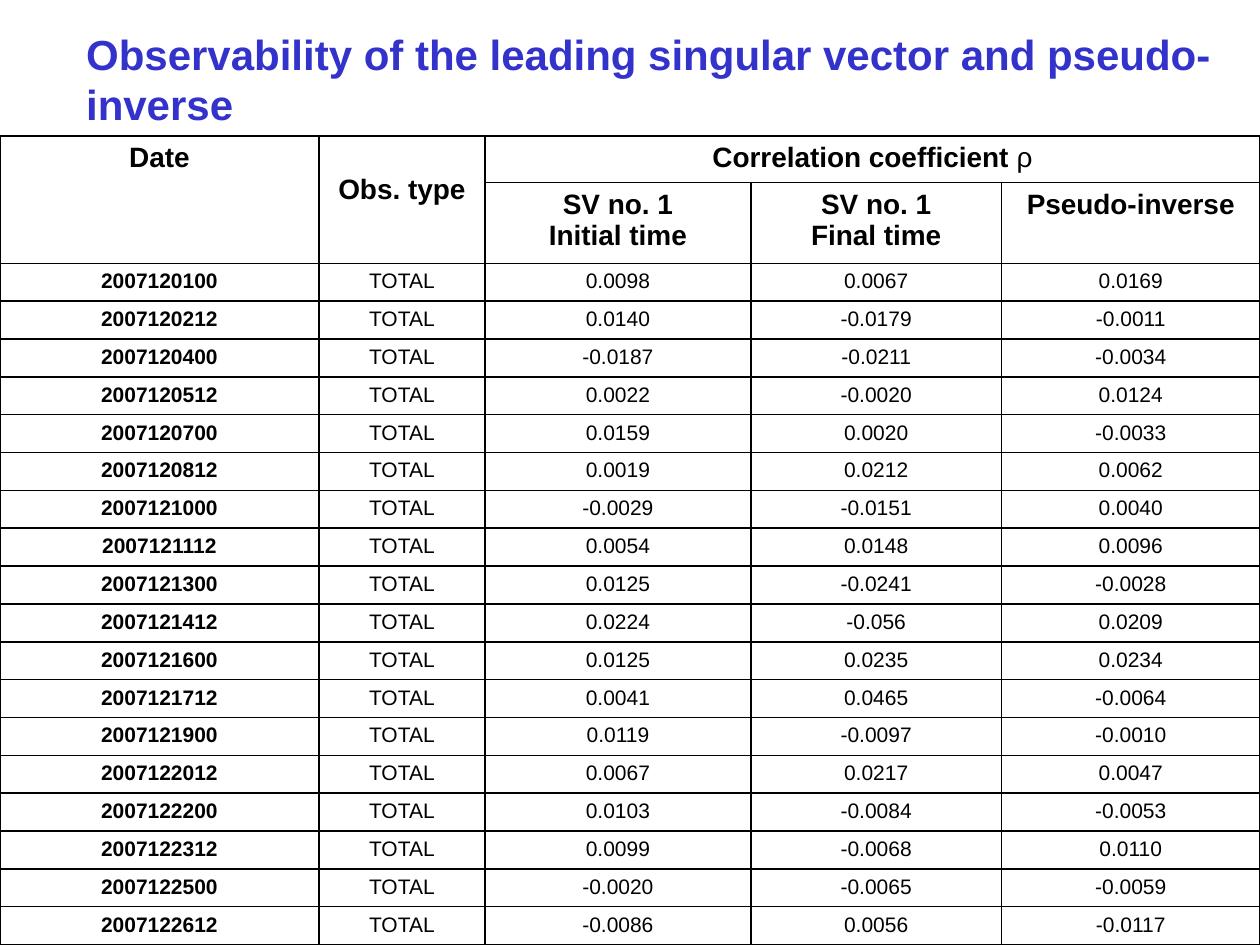
from dataclasses import dataclass
from lxml import etree
from pptx import Presentation
from pptx.dml.color import RGBColor
from pptx.enum import text
from pptx.oxml import ns
from pptx.util import Pt


@dataclass(frozen=True)
class Theme:
    """Hold the colours, font and type sizes of the slide."""
    font: str = "Arial"
    title_color: str = "3333CC"
    ink: str = "000000"
    paper: str = "FFFFFF"
    title_size: int = 24
    header_size: int = 16
    body_size: int = 12
    border: int = 1


THEME = Theme()
TITLE = "Observability of the leading singular vector and pseudo-inverse"
COLUMN_WIDTHS = (182.2, 95, 151.9, 143.3, 147.6)
HEADER_HEIGHTS = (26.64, 46.08)
OBS_TYPE_INSET = 22
HEADERS = (
    (0, 0, ("Date",)),
    (0, 1, ("Obs. type",)),
    (1, 2, ("SV no. 1", "Initial time")),
    (1, 3, ("SV no. 1", "Final time")),
    (1, 4, ("Pseudo-inverse",)),
)
OBSERVATIONS = (
    ("2007120100", "0.0098", "0.0067", "0.0169"),
    ("2007120212", "0.0140", "-0.0179", "-0.0011"),
    ("2007120400", "-0.0187", "-0.0211", "-0.0034"),
    ("2007120512", "0.0022", "-0.0020", "0.0124"),
    ("2007120700", "0.0159", "0.0020", "-0.0033"),
    ("2007120812", "0.0019", "0.0212", "0.0062"),
    ("2007121000", "-0.0029", "-0.0151", "0.0040"),
    ("2007121112", "0.0054", "0.0148", "0.0096"),
    ("2007121300", "0.0125", "-0.0241", "-0.0028"),
    ("2007121412", "0.0224", "-0.056", "0.0209"),
    ("2007121600", "0.0125", "0.0235", "0.0234"),
    ("2007121712", "0.0041", "0.0465", "-0.0064"),
    ("2007121900", "0.0119", "-0.0097", "-0.0010"),
    ("2007122012", "0.0067", "0.0217", "0.0047"),
    ("2007122200", "0.0103", "-0.0084", "-0.0053"),
    ("2007122312", "0.0099", "-0.0068", "0.0110"),
    ("2007122500", "-0.0020", "-0.0065", "-0.0059"),
    ("2007122612", "-0.0086", "0.0056", "-0.0117"),
)


def add_run(paragraph, words, size, bold, color=THEME.ink):
    """Append one formatted run to a paragraph."""
    run = paragraph.add_run()
    run.text = words
    run.font.name = THEME.font
    run.font.size = Pt(size)
    run.font.bold = bold
    run.font.color.rgb = RGBColor.from_string(color)


def write_cell(cell, lines, size, bold):
    """Write centred lines into a table cell."""
    frame = cell.text_frame
    for index, line in enumerate(lines):
        paragraph = frame.add_paragraph() if index else frame.paragraphs[0]
        paragraph.alignment = text.PP_ALIGN.CENTER
        add_run(paragraph, line, size, bold)


def style_cell(cell):
    """Give a cell a plain fill and a border on all four sides."""
    cell.fill.solid()
    cell.fill.fore_color.rgb = RGBColor.from_string(THEME.paper)
    properties = cell._tc.get_or_add_tcPr()
    for index, side in enumerate(("lnL", "lnR", "lnT", "lnB")):
        line = etree.Element(ns.qn(f"a:{side}"), w=str(Pt(THEME.border)))
        fill = etree.SubElement(line, ns.qn("a:solidFill"))
        etree.SubElement(fill, ns.qn("a:srgbClr"), val=THEME.ink)
        properties.insert(index, line)


def place_title(slide, left, top, width, height):
    """Move and fill the title placeholder."""
    title = slide.shapes.title
    title.left, title.top = Pt(left), Pt(top)
    title.width, title.height = Pt(width), Pt(height)
    frame = title.text_frame
    frame.word_wrap = True
    frame.auto_size = text.MSO_AUTO_SIZE.NONE
    frame.vertical_anchor = text.MSO_ANCHOR.MIDDLE
    paragraph = frame.paragraphs[0]
    paragraph.alignment = text.PP_ALIGN.LEFT
    add_run(paragraph, TITLE, THEME.title_size, True, THEME.title_color)


def write_headers(table):
    """Merge and fill the two header rows."""
    for column in (0, 1):
        table.cell(0, column).merge(table.cell(1, column))
    correlation = table.cell(0, 2)
    correlation.merge(table.cell(0, 4))
    for row, column, lines in HEADERS:
        write_cell(table.cell(row, column), lines, THEME.header_size, True)
    table.cell(0, 1).margin_top = Pt(OBS_TYPE_INSET)
    write_cell(correlation, ("Correlation coefficient ",), THEME.header_size, True)
    add_run(correlation.text_frame.paragraphs[0], "ρ", THEME.header_size, False)


def place_table(slide, left, top, width, height):
    """Build the table of correlation coefficients."""
    header_count = len(HEADER_HEIGHTS)
    row_count = header_count + len(OBSERVATIONS)
    table = slide.shapes.add_table(
        row_count, len(COLUMN_WIDTHS), Pt(left), Pt(top), Pt(width), Pt(height)
    ).table
    table.first_row = table.horz_banding = False
    for column, column_width in zip(table.columns, COLUMN_WIDTHS):
        column.width = Pt(column_width)
    body_height = (height - sum(HEADER_HEIGHTS)) / len(OBSERVATIONS)
    heights = HEADER_HEIGHTS + (body_height,) * len(OBSERVATIONS)
    for row, row_height in zip(table.rows, heights):
        row.height = Pt(row_height)
    for cell in table.iter_cells():
        style_cell(cell)
    write_headers(table)
    for row, (date, *values) in enumerate(OBSERVATIONS, header_count):
        for column, words in enumerate((date, "TOTAL", *values)):
            write_cell(table.cell(row, column), (words,), THEME.body_size, column == 0)


def main():
    """Build and save the presentation."""
    presentation = Presentation()
    presentation.slide_width, presentation.slide_height = Pt(720), Pt(540)
    slide = presentation.slides.add_slide(presentation.slide_layouts[5])
    place_title(slide, 42, 24, 658, 42)
    place_table(slide, 0, 77.76, 720, 462.24)
    presentation.save("out.pptx")


if __name__ == "__main__":
    main()
